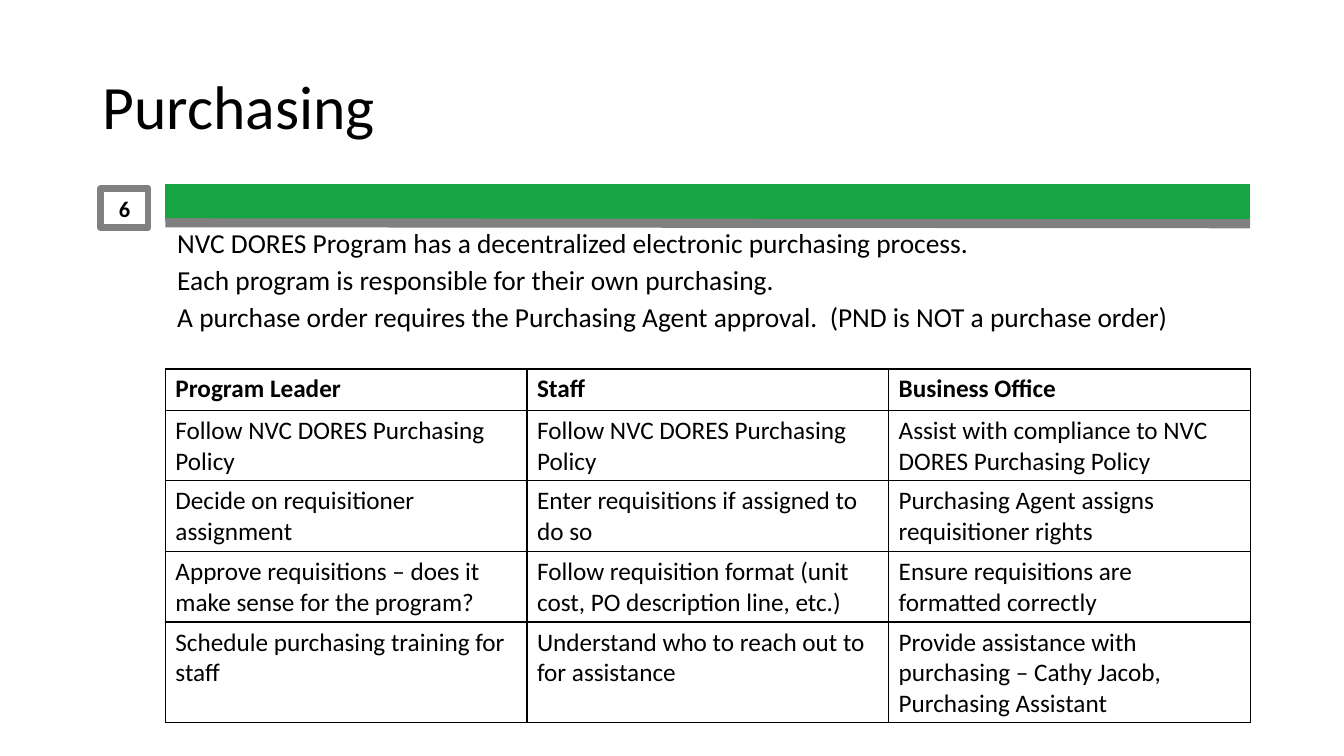
from pptx import Presentation
from pptx import util as u
from pptx.dml.color import RGBColor
from pptx.enum import shapes, text
from pptx.oxml import parse_xml
from pptx.oxml.ns import nsdecls, qn

INK = {"black": "000000", "white": "FFFFFF", "green": "17A543", "gray": "808080"}
FONT = "Calibri"
LEFT, WIDTH = 1.64, 10.76
POINTS = [
    "NVC DORES Program has a decentralized electronic purchasing process.",
    "Each program is responsible for their own purchasing.",
    "A purchase order requires the Purchasing Agent approval.  (PND is NOT a purchase order)",
]
DUTIES = [
    ["Program Leader", "Staff", "Business Office"],
    ["Follow NVC DORES Purchasing Policy", "Follow NVC DORES Purchasing Policy",
     "Assist with compliance to NVC DORES Purchasing Policy"],
    ["Decide on requisitioner assignment", "Enter requisitions if assigned to do so",
     "Purchasing Agent assigns requisitioner rights"],
    ["Approve requisitions – does it make sense for the program?",
     "Follow requisition format (unit cost, PO description line, etc.)",
     "Ensure requisitions are formatted correctly"],
    ["Schedule purchasing training for staff",
     "Understand who to reach out to for assistance",
     "Provide assistance with purchasing – Cathy Jacob, Purchasing Assistant"],
]


def color(name):
    return RGBColor.from_string(INK[name])


def write(frame, lines, size, bold=False, space=None, before=0):
    frame.word_wrap = True
    frame.text = "\n".join(lines)
    for para in frame.paragraphs:
        para.line_spacing = space
        para.space_before = u.Pt(before)
        for run in para.runs:
            run.font.name = FONT
            run.font.size = u.Pt(size)
            run.font.bold = bold
            run.font.color.rgb = color("black")


def add_text(slide, box, lines, size, anchor, **style):
    frame = slide.shapes.add_textbox(*map(u.Inches, box)).text_frame
    write(frame, lines, size, **style)
    frame.vertical_anchor = anchor


def add_bar(slide, start, end, ink, weight):
    bar = slide.shapes.add_connector(
        shapes.MSO_CONNECTOR.STRAIGHT,
        u.Inches(LEFT), u.Inches(start), u.Inches(LEFT + WIDTH), u.Inches(end))
    bar.line.color.rgb = color(ink)
    bar.line.width = u.Pt(weight)
    props = bar._element.find(qn("p:spPr"))
    props.append(parse_xml(f"<a:effectLst {nsdecls('a')}/>"))


def add_badge(slide, number):
    badge = slide.shapes.add_shape(
        shapes.MSO_SHAPE.RECTANGLE, *map(u.Inches, (1, 1.87, 0.47, 0.39)))
    badge.shadow.inherit = False
    badge.fill.background()
    badge.line.color.rgb = color("gray")
    badge.line.width = u.Pt(4.75)
    frame = badge.text_frame
    write(frame, [number], 16, bold=True)
    frame.margin_left = frame.margin_right = 0
    frame.vertical_anchor = text.MSO_ANCHOR.MIDDLE
    frame.paragraphs[0].alignment = text.PP_ALIGN.CENTER


def add_border(cell):
    props = cell._tc.get_or_add_tcPr()
    for pos, side in enumerate(("lnL", "lnR", "lnT", "lnB")):
        props.insert(pos, parse_xml(
            f'<a:{side} {nsdecls("a")} w="{u.Pt(1)}"><a:solidFill>'
            f'<a:srgbClr val="{INK["black"]}"/></a:solidFill></a:{side}>'))


def add_grid(slide, rows):
    high = 0.41
    grid = slide.shapes.add_table(
        len(rows), len(rows[0]), u.Inches(LEFT), u.Inches(3.66),
        u.Inches(WIDTH), u.Inches(high * len(rows))).table
    for r, row in enumerate(rows):
        grid.rows[r].height = u.Inches(high)
        for c, words in enumerate(row):
            cell = grid.cell(r, c)
            cell.fill.solid()
            cell.fill.fore_color.rgb = color("white")
            write(cell.text_frame, [words], 18, bold=r == 0)
            add_border(cell)


def main():
    deck = Presentation()
    deck.slide_width, deck.slide_height = u.Inches(13.33), u.Inches(7.5)
    slide = deck.slides.add_slide(deck.slide_layouts[6])
    add_text(slide, (0.92, 0.36, 11.5, 1.45), ["Purchasing"], 44,
             text.MSO_ANCHOR.MIDDLE, space=0.9)
    add_text(slide, (1.66, 2.28, WIDTH, 1.13), POINTS, 19.6,
             text.MSO_ANCHOR.TOP, space=0.7, before=10)
    add_bar(slide, 2.01, 2.01, "green", 26.25)
    add_badge(slide, "6")
    add_bar(slide, 2.21, 2.22, "gray", 6.5)
    add_grid(slide, DUTIES)
    deck.save("out.pptx")


if __name__ == "__main__":
    main()
